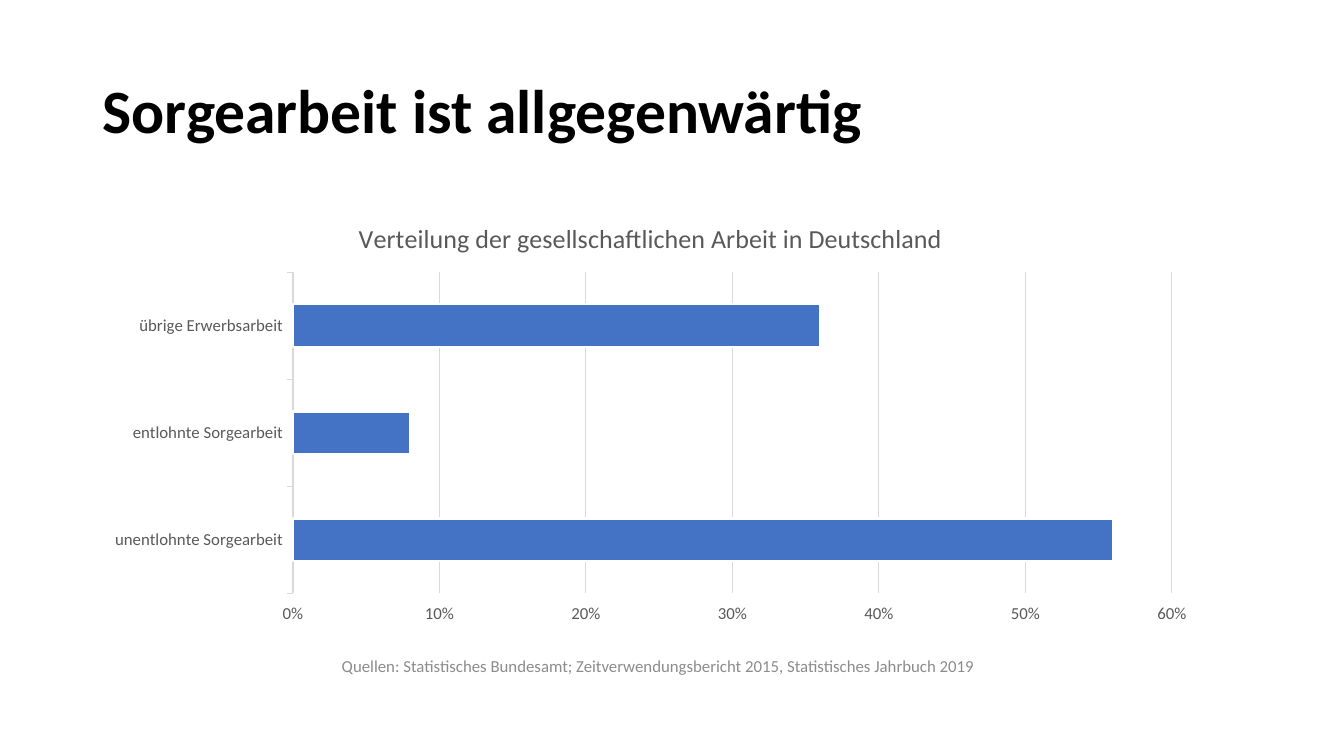
"""Build a slide with a bar chart on the distribution of work in Germany."""
from dataclasses import dataclass

from pptx import Presentation
from pptx.chart.data import CategoryChartData
from pptx.dml.color import RGBColor
from pptx.enum.chart import XL_CHART_TYPE, XL_TICK_MARK
from pptx.enum.text import MSO_ANCHOR, PP_ALIGN
from pptx.util import Inches, Pt

HEADING = "Sorgearbeit ist allgegenwärtig"
CHART_TITLE = "Verteilung der gesellschaftlichen Arbeit in Deutschland"
SHARES = {
    "unentlohnte Sorgearbeit": 0.56,
    "entlohnte Sorgearbeit": 0.08,
    "übrige Erwerbsarbeit": 0.36,
}
SOURCES = (
    "Quellen: Statistisches Bundesamt; Zeitverwendungsbericht 2015, "
    "Statistisches Jahrbuch 2019"
)
WIDTH, HEIGHT = 13.33, 7.5
MARGIN = 0.92


@dataclass(frozen=True)
class Theme:
    """Hold the colours, font and type sizes."""

    font: str = "Calibri"
    ink: str = "000000"
    label: str = "595959"
    muted: str = "8C8C8C"
    grid: str = "D9D9D9"
    bar: str = "4472C4"
    paper: str = "FFFFFF"
    heading_size: float = 44
    title_size: float = 18.6
    label_size: float = 12


THEME = Theme()


def style_font(font, size, color, bold=False):
    """Apply the theme font with a size, colour and weight."""
    for name, value in {"name": THEME.font, "size": Pt(size), "bold": bold}.items():
        setattr(font, name, value)
    font.color.rgb = RGBColor.from_string(color)


def style_line(line, color, width):
    """Give a line its colour and width in points."""
    line.color.rgb = RGBColor.from_string(color)
    line.width = Pt(width)


def add_text(page, text, area, size, color, bold=False, **paragraph_format):
    """Add one vertically centred paragraph in a box."""
    frame = page.shapes.add_textbox(*map(Inches, area)).text_frame
    for name, value in {"word_wrap": True, "vertical_anchor": MSO_ANCHOR.MIDDLE}.items():
        setattr(frame, name, value)
    para = frame.paragraphs[0]
    for name, value in paragraph_format.items():
        setattr(para, name, value)
    span = para.add_run()
    span.text = text
    style_font(span.font, size, color, bold)


def add_bars(page, area):
    """Add the bar chart of shares."""
    data = CategoryChartData(number_format="0%")
    data.categories = list(SHARES)
    data.add_series(CHART_TITLE, list(SHARES.values()))
    chart = page.shapes.add_chart(
        XL_CHART_TYPE.BAR_CLUSTERED, *map(Inches, area), data
    ).chart
    style_font(chart.font, 10, THEME.ink)
    chart.has_legend = False
    chart.has_title = True
    title = chart.chart_title
    title.include_in_layout = False
    title.text_frame.text = CHART_TITLE
    style_font(title.text_frame.paragraphs[0].runs[0].font, THEME.title_size, THEME.label)

    for axis in (chart.category_axis, chart.value_axis):
        axis.major_tick_mark = XL_TICK_MARK.OUTSIDE
        style_font(axis.tick_labels.font, THEME.label_size, THEME.label)
    style_line(chart.category_axis.format.line, THEME.grid, 0.75)

    scale = chart.value_axis
    limits = {"minimum_scale": 0, "maximum_scale": 0.6, "major_unit": 0.1}
    for name, value in limits.items():
        setattr(scale, name, value)
    for name, value in {"number_format": "0%", "number_format_is_linked": False}.items():
        setattr(scale.tick_labels, name, value)
    scale.format.line.fill.background()
    style_line(scale.major_gridlines.format.line, THEME.grid, 0.75)

    plot = chart.plots[0]
    for name, value in {"gap_width": 150, "vary_by_categories": False}.items():
        setattr(plot, name, value)
    bars = plot.series[0].format
    bars.fill.solid()
    bars.fill.fore_color.rgb = RGBColor.from_string(THEME.bar)
    style_line(bars.line, THEME.paper, 1.5)


def main():
    """Compose and save the deck."""
    deck = Presentation()
    deck.slide_width, deck.slide_height = Inches(WIDTH), Inches(HEIGHT)
    page = deck.slides.add_slide(deck.slide_layouts[6])
    add_text(
        page, HEADING, (MARGIN, 0.4, WIDTH - 2 * MARGIN, 1.45),
        THEME.heading_size, THEME.ink, bold=True, line_spacing=0.9,
    )
    add_bars(page, (MARGIN, 2, 11.07, 4.27))
    add_text(
        page, SOURCES, (2.56, 6.41, 7.94, 0.4),
        THEME.label_size, THEME.muted, alignment=PP_ALIGN.CENTER,
    )
    deck.save("out.pptx")


if __name__ == "__main__":
    main()
